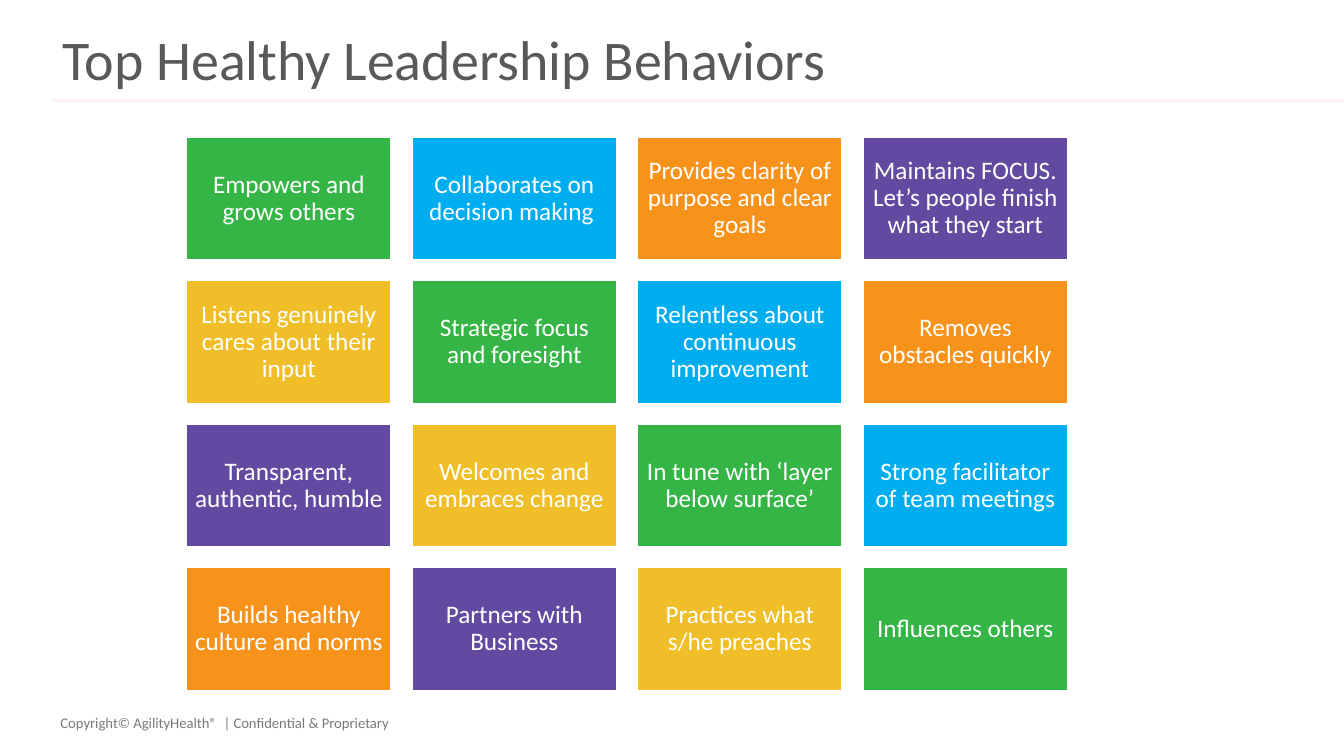
from dataclasses import dataclass
from itertools import cycle

from pptx import Presentation
from pptx.dml.color import RGBColor as RGB
from pptx.enum.shapes import MSO_CONNECTOR as CONNECTOR, MSO_SHAPE as SHAPE
from pptx.enum.text import MSO_ANCHOR as ANCHOR, MSO_AUTO_SIZE as AUTOSIZE, PP_ALIGN as ALIGN
from pptx.oxml.ns import qn
from pptx.slide import Slide
from pptx.text.text import TextFrame
from pptx.util import Inches, Pt


@dataclass(frozen=True)
class Theme:
    font: str = "Calibri"
    title: str = "58595B"
    footer: str = "7A7A7A"
    rule: str = "FDF1F3"
    white: str = "FFFFFF"
    tiles: tuple[str, ...] = ("35B546", "00AEEF", "F7931B", "624AA0", "F0BE28")
    title_size: float = 40
    tile_size: float = 18
    footer_size: float = 10.5


@dataclass(frozen=True)
class Tile:
    text: str
    color: str
    left: float
    top: float


THEME = Theme()
COLUMNS, ROWS = 4, 4
TILE_W, TILE_H = 2.03, 1.22
GRID_LEFT, GRID_TOP, GRID_W, GRID_H = 1.85, 1.36, 8.74, 5.49
STEP_X = (GRID_W - TILE_W) / (COLUMNS - 1)
STEP_Y = (GRID_H - TILE_H) / (ROWS - 1)

BEHAVIORS = (
    "Empowers and grows others",
    "Collaborates on decision making ",
    "Provides clarity of purpose and clear goals",
    "Maintains FOCUS. Let’s people finish what they start",
    "Listens genuinely cares about their input",
    "Strategic focus and foresight",
    "Relentless about continuous improvement",
    "Removes obstacles quickly",
    "Transparent, authentic, humble",
    "Welcomes and embraces change",
    "In tune with ‘layer below surface’",
    "Strong facilitator of team meetings",
    "Builds healthy culture and norms",
    "Partners with Business",
    "Practices what s/he preaches",
    "Influences others",
)


def write(tf: TextFrame, text: str, size: float, color: str, inset_x: float, inset_y: float,
          align: ALIGN = ALIGN.LEFT, anchor: ANCHOR = ANCHOR.MIDDLE, spacing: float = 0.9) -> None:
    tf.word_wrap = True
    tf.auto_size = AUTOSIZE.NONE
    tf.vertical_anchor = anchor
    tf.margin_left = tf.margin_right = Inches(inset_x)
    tf.margin_top = tf.margin_bottom = Inches(inset_y)
    p = tf.paragraphs[0]
    p.alignment = align
    p.line_spacing = spacing
    r = p.add_run()
    r.text = text
    r.font.name = THEME.font
    r.font.size = Pt(size)
    r.font.color.rgb = RGB.from_string(color)


def add_title(s: Slide, text: str) -> None:
    sp = s.shapes.title
    sp.left, sp.top, sp.width, sp.height = map(Inches, (0.52, 0.27, 12.29, 0.7))
    write(sp.text_frame, text, THEME.title_size, THEME.title, 0.1, 0.05)


def add_rule(s: Slide) -> None:
    line = s.shapes.add_connector(CONNECTOR.STRAIGHT, Inches(0.52), Inches(1), Inches(13.33), Inches(1))
    line.line.color.rgb = RGB.from_string(THEME.rule)
    line.line.width = Pt(2)
    sp_pr = line._element.spPr
    sp_pr.append(sp_pr.makeelement(qn("a:effectLst"), {}))


def add_tile(s: Slide, tile: Tile) -> None:
    sp = s.shapes.add_shape(SHAPE.RECTANGLE, Inches(tile.left), Inches(tile.top),
                            Inches(TILE_W), Inches(TILE_H))
    sp.shadow.inherit = False
    sp.fill.solid()
    sp.fill.fore_color.rgb = RGB.from_string(tile.color)
    sp.line.color.rgb = RGB.from_string(THEME.white)
    sp.line.width = Pt(1)
    write(sp.text_frame, tile.text, THEME.tile_size, THEME.white, 0.07, 0.07, ALIGN.CENTER)


def add_footer(s: Slide, text: str) -> None:
    sp = s.shapes.add_textbox(Inches(0.6), Inches(7.08), Inches(4.5), Inches(0.28))
    write(sp.text_frame, text, THEME.footer_size, THEME.footer, 0, 0,
          anchor=ANCHOR.TOP, spacing=1.0)


def main() -> None:
    prs = Presentation()
    prs.slide_width, prs.slide_height = Inches(13.33), Inches(7.5)
    s = prs.slides.add_slide(prs.slide_layouts.get_by_name("Title Only"))
    add_rule(s)
    add_footer(s, "Copyright© AgilityHealth®  | Confidential & Proprietary")
    add_title(s, "Top Healthy Leadership Behaviors")
    for i, (text, color) in enumerate(zip(BEHAVIORS, cycle(THEME.tiles))):
        row, column = divmod(i, COLUMNS)
        add_tile(s, Tile(text, color, GRID_LEFT + column * STEP_X, GRID_TOP + row * STEP_Y))
    prs.save("out.pptx")


if __name__ == "__main__":
    main()
